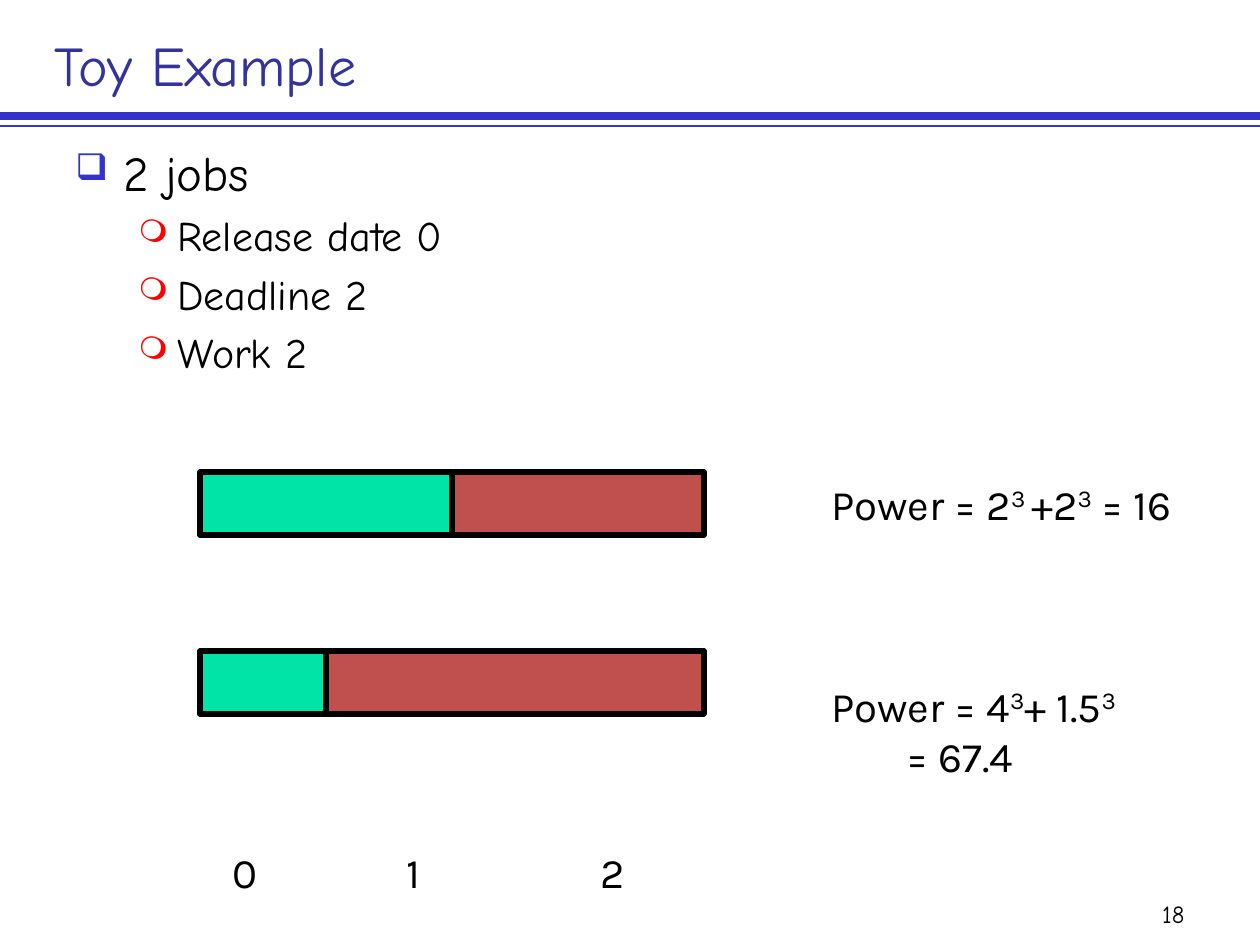
import pptx
import pptx.dml.color
import pptx.enum.shapes
import pptx.enum.text
import pptx.oxml.ns
import pptx.util
from lxml import etree

PX_PER_INCH = 126
EMU_PER_PX = 914400 / PX_PER_INCH

COLORS = {
    "title": "333399",
    "rule": "3333CC",
    "ring": "FF0000",
    "text": "000000",
    "first_job": "00E4A8",
    "second_job": "C0504D",
}
ANCHOR = pptx.enum.text.MSO_ANCHOR
ALIGN = pptx.enum.text.PP_ALIGN


def px(length):
    return pptx.util.Emu(round(length * EMU_PER_PX))


def color(name):
    return pptx.dml.color.RGBColor.from_string(COLORS[name])


def add_child(parent, tag, **attributes):
    child = etree.SubElement(parent, pptx.oxml.ns.qn(tag))
    for key, value in attributes.items():
        child.set(key, str(value))
    return child


def write(paragraph, text, *, size=24, font="Karla", ink="text", align=None):
    """Fill a paragraph; every second piece between ^ marks is superscript."""
    paragraph.alignment = align
    for index, piece in enumerate(text.split("^")):
        if not piece:
            continue
        run = paragraph.add_run()
        run.text = piece
        run.font.size = pptx.util.Pt(size)
        run.font.name = font
        run.font.color.rgb = color(ink)
        if index % 2:
            run._r.get_or_add_rPr().set("baseline", "30000")


class SlideBuilder:
    heading_font = "Comic Neue"

    def __init__(self, slide):
        self.slide = slide

    def rule(self, y, width):
        line = self.slide.shapes.add_connector(
            pptx.enum.shapes.MSO_CONNECTOR.STRAIGHT,
            px(0), px(y), px(10 * PX_PER_INCH), px(y))
        line.line.color.rgb = color("rule")
        line.line.width = pptx.util.Pt(width)
        add_child(line._element.spPr, "a:effectLst")

    def frame(self, left, top, width, height, anchor=ANCHOR.TOP):
        box = self.slide.shapes.add_textbox(px(left), px(top), px(width), px(height))
        box.text_frame.word_wrap = True
        box.text_frame.vertical_anchor = anchor
        return box.text_frame

    def text(self, place, text, anchor=ANCHOR.TOP, **style):
        paragraph = self.frame(*place, anchor=anchor).paragraphs[0]
        write(paragraph, text, **style)
        return paragraph

    def bullets(self, place, items):
        levels = [
            dict(margin=48, hang=48, mark="❑", ink="rule", size=28),
            dict(margin=102, hang=39, mark="❍", ink="ring", size=24),
        ]
        frame = self.frame(*place)
        for index, (level, text) in enumerate(items):
            look = levels[level]
            paragraph = frame.add_paragraph() if index else frame.paragraphs[0]
            paragraph.level = level
            write(paragraph, text, size=look["size"], font=self.heading_font)
            props = paragraph._p.get_or_add_pPr()
            props.set("marL", str(px(look["margin"])))
            props.set("indent", str(-px(look["hang"])))
            add_child(add_child(props, "a:spcBef"), "a:spcPct", val=20000)
            add_child(add_child(props, "a:buClr"), "a:srgbClr", val=COLORS[look["ink"]])
            add_child(props, "a:buSzPct", val=75000)
            add_child(props, "a:buChar", char=look["mark"])

    def job(self, left, top, width, height, fill):
        bar = self.slide.shapes.add_shape(
            pptx.enum.shapes.MSO_SHAPE.RECTANGLE,
            px(left), px(top), px(width), px(height))
        bar.shadow.inherit = False
        bar.fill.solid()
        bar.fill.fore_color.rgb = color(fill)
        bar.line.color.rgb = color("text")
        bar.line.width = pptx.util.Pt(3)

    def schedule(self, left, top, widths):
        for width, fill in zip(widths, ("first_job", "second_job")):
            self.job(left, top, width, 63, fill)
            left += width

    def time_axis(self, place, labels, stops):
        paragraph = self.text(place, "\t".join(labels))
        tabs = add_child(paragraph._p.get_or_add_pPr(), "a:tabLst")
        for stop in stops:
            add_child(tabs, "a:tab", pos=px(stop), algn="l")

    def power(self, place, formula, result=None):
        paragraph = self.text(place, formula)
        if result:
            # The result continues the formula on an indented line
            line = paragraph._parent.add_paragraph()
            write(line, result)
            line._p.get_or_add_pPr().set("marL", str(px(75)))


def main():
    deck = pptx.Presentation()
    deck.slide_width = px(1260)
    deck.slide_height = px(945)
    page = SlideBuilder(deck.slides.add_slide(deck.slide_layouts[6]))

    # Heading and its double rule
    page.rule(116, 4.5)
    page.rule(126, 0.75)
    page.text((42, 30, 1155, 74), "Toy Example", anchor=ANCHOR.BOTTOM,
              size=32, font=page.heading_font, ink="title")

    # Job description
    page.bullets((63, 136, 1134, 703), [
        (0, "2 jobs"),
        (1, "Release date 0"),
        (1, "Deadline 2"),
        (1, "Work 2"),
    ])

    # Two schedules over the same time span
    span = 504
    for top, first_width in ((472, span // 2), (651, span // 4)):
        page.schedule(200, top, (first_width, span - first_width))
    page.time_axis((220, 840, 532, 63), ("0", "1", "2"), (174, 368))

    # Power of each schedule
    page.power((819, 472, 418, 63), "Power = 2^3 ^+2^3^ = 16")
    page.power((819, 674, 418, 113), "Power = 4^3^+ 1.5^3", "= 67.4")

    # Page number
    page.text((935, 872, 262, 63), "18", anchor=ANCHOR.BOTTOM,
              size=14, font=page.heading_font, align=ALIGN.RIGHT)

    deck.save("out.pptx")


if __name__ == "__main__":
    main()
